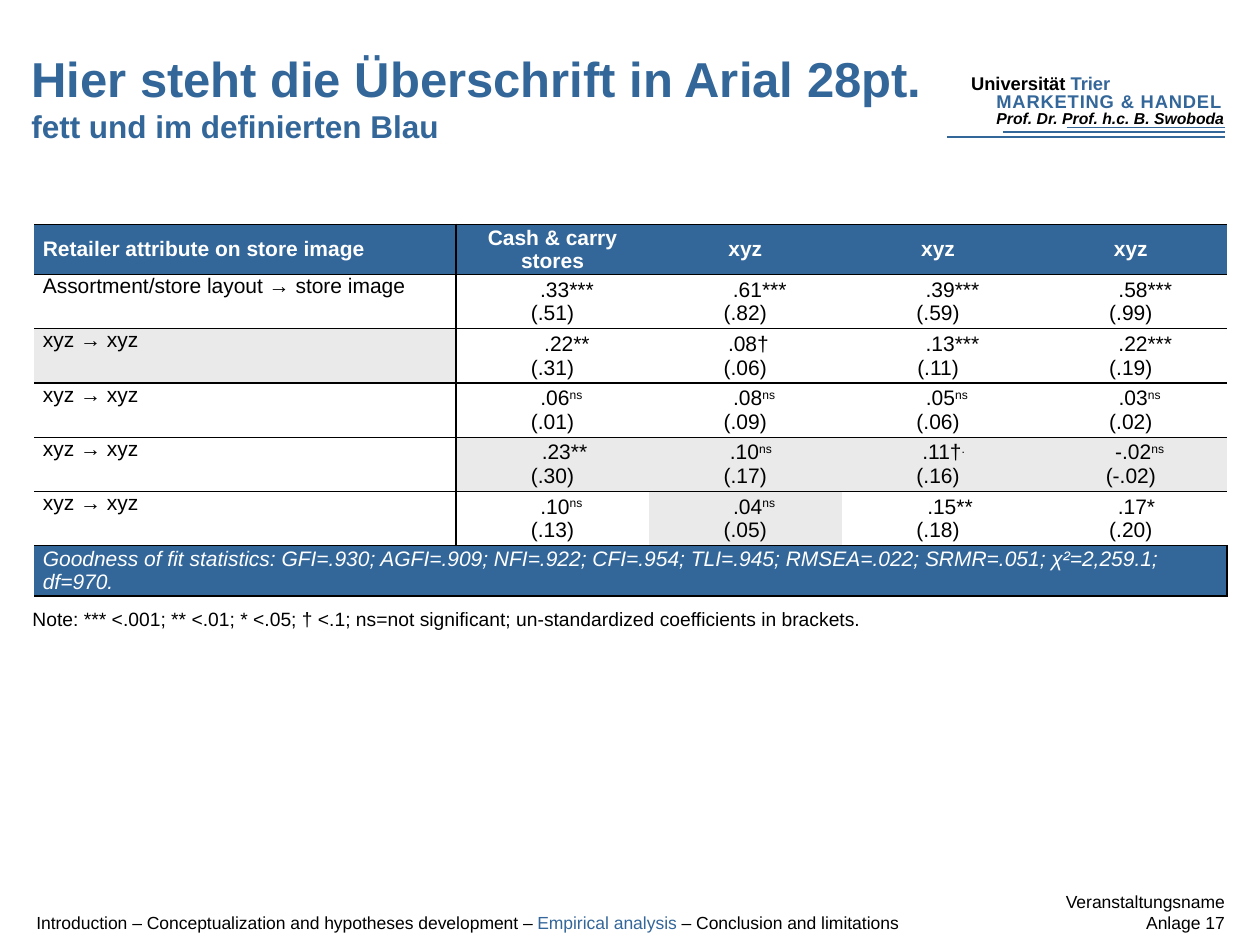
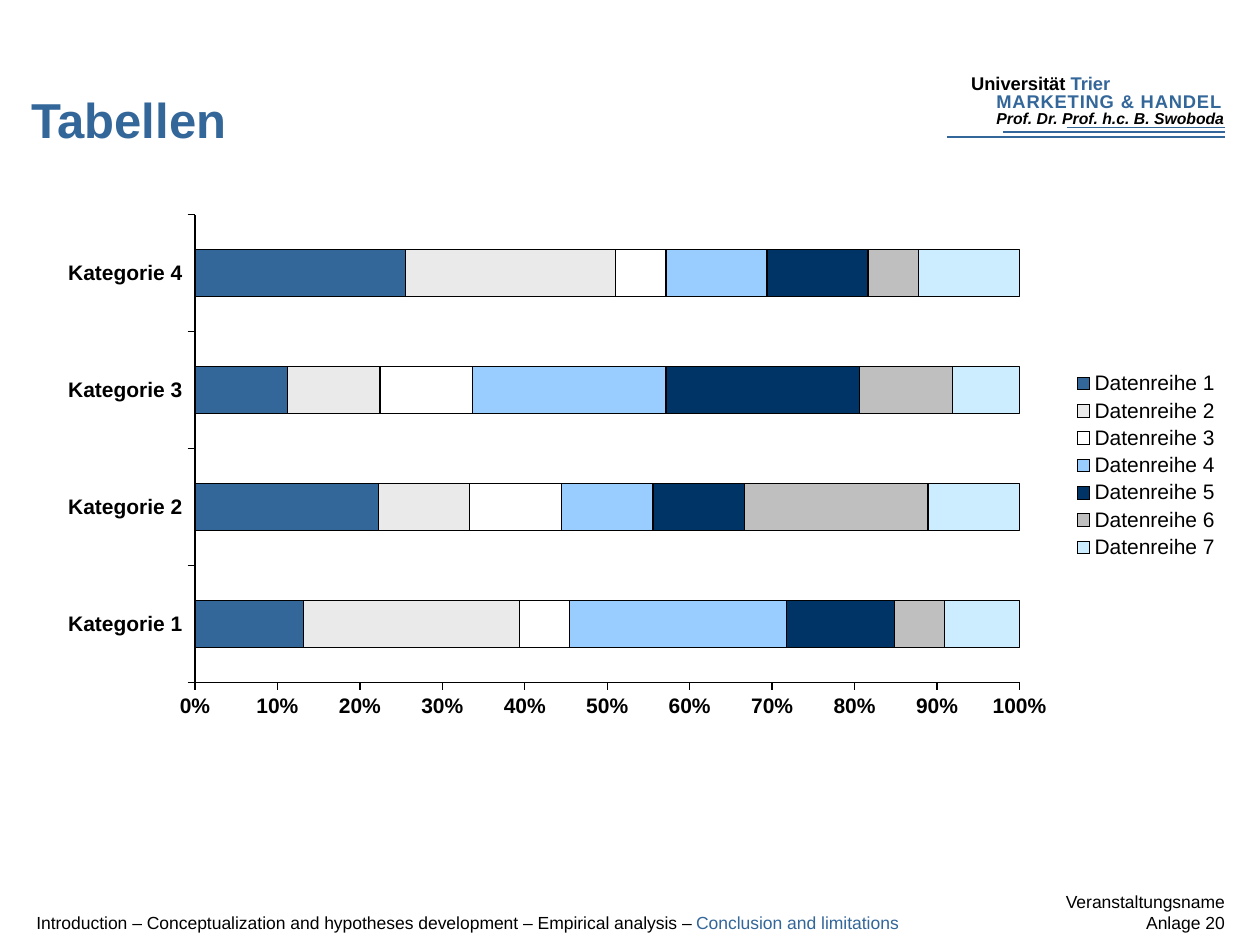
from dataclasses import dataclass
from typing import NamedTuple

from lxml.etree import SubElement
from pptx import Presentation
from pptx.chart.data import CategoryChartData
from pptx.dml.color import RGBColor
from pptx.enum.chart import XL_CHART_TYPE, XL_LEGEND_POSITION
from pptx.enum.shapes import MSO_CONNECTOR
from pptx.enum.text import MSO_ANCHOR, PP_ALIGN
from pptx.oxml import parse_xml
from pptx.oxml.ns import nsdecls, qn
from pptx.slide import Slide
from pptx.table import _Cell
from pptx.text.text import TextFrame, _Paragraph
from pptx.util import Emu, Pt

EMU_PER_PX = 9144  # 100 px to the inch
FONT = "Arial"
COLORS = {
    "blue": "336699", "black": "000000", "white": "FFFFFF", "light_gray": "EAEAEA",
    "sky": "99CCFF", "navy": "003366", "gray": "BFBFBF", "ice": "CCECFF",
}
SECTIONS = ["Introduction", "Conceptualization and hypotheses development",
            "Empirical analysis", "Conclusion and limitations"]


class Box(NamedTuple):
    left: int
    top: int
    width: int
    height: int


class Span(NamedTuple):
    text: str
    color: str = "black"
    size: float | None = None
    superscript: bool = False


class Rule(NamedTuple):
    left: int
    y: int
    weight: float


class Estimate(NamedTuple):
    value: str
    raised: str
    bracket: str
    indent: int


class Effect(NamedTuple):
    path_label: str
    estimates: list[Estimate]
    shaded: set[int]


class Series(NamedTuple):
    name: str
    values: list[int]
    color: str


@dataclass
class TextStyle:
    size: float
    bold: bool = False
    italic: bool = False
    align: PP_ALIGN = PP_ALIGN.LEFT
    tracking: int = 0


HEADLINE = TextStyle(28, bold=True)
FOOTER = TextStyle(10)
FOOTER_RIGHT = TextStyle(10, align=PP_ALIGN.RIGHT)
LETTERHEAD = [
    (Box(761, 52, 227, 29), [Span("Universität "), Span("Trier", "blue")],
     TextStyle(10.5, bold=True)),
    (Box(781, 67, 219, 29), [Span("MARKETING & HANDEL", "blue")],
     TextStyle(10.5, bold=True, tracking=50)),
    (Box(781, 81, 219, 25), [Span("Prof. Dr. Prof. h.c. B. Swoboda")],
     TextStyle(9, bold=True, italic=True)),
]
LETTERHEAD_RULES = [Rule(752, 109, 1), Rule(796, 105, 1), Rule(847, 101, 0.5)]
RIGHT_EDGE = 972

TABLE_BOX = Box(27, 178, 945, 296)
COLUMN_WIDTHS = [335, 153, 153, 153, 153]
BAND_HEIGHT, EFFECT_HEIGHT = 40, 43
HEADER = ["Retailer attribute on store image", "Cash & carry stores", "xyz", "xyz", "xyz"]
EFFECTS = [
    Effect("Assortment/store layout → store image", [
        Estimate(".33***", "", "(.51)", 23), Estimate(".61***", "", "(.82)", 23),
        Estimate(".39***", "", "(.59)", 23), Estimate(".58***", "", "(.99)", 23)], set()),
    Effect("xyz → xyz", [
        Estimate(".22**", "", "(.31)", 23), Estimate(".08†", "", "(.06)", 5),
        Estimate(".13***", "", "(.11)", 23), Estimate(".22***", "", "(.19)", 23)], {0}),
    Effect("xyz → xyz", [
        Estimate(".06", "ns", "(.01)", 14), Estimate(".08", "ns", "(.09)", 14),
        Estimate(".05", "ns", "(.06)", 14), Estimate(".03", "ns", "(.02)", 14)], set()),
    Effect("xyz → xyz", [
        Estimate(".23**", "", "(.30)", 19), Estimate(".10", "ns", "(.17)", 9),
        Estimate(".11†", ".", "(.16)", 9), Estimate("-.02", "ns", "(-.02)", 14)], {1, 2, 3, 4}),
    Effect("xyz → xyz", [
        Estimate(".10", "ns", "(.13)", 14), Estimate(".04", "ns", "(.05)", 14),
        Estimate(".15**", "", "(.18)", 19), Estimate(".17*", "", "(.20)", 9)], {2}),
]
FIT = ("Goodness of fit statistics: GFI=.930; AGFI=.909; NFI=.922; CFI=.954; TLI=.945; "
       "RMSEA=.022; SRMR=.051; χ²=2,259.1; df=970.")
NOTE = ("Note: *** <.001; ** <.01; * <.05; † <.1; ns=not significant; "
        "un-standardized coefficients in brackets.")

CATEGORIES = [f"Kategorie {number}" for number in range(1, 5)]
SERIES = [
    Series("Datenreihe 1", [13, 22, 11, 25], "blue"),
    Series("Datenreihe 2", [26, 11, 11, 25], "light_gray"),
    Series("Datenreihe 3", [6, 11, 11, 6], "white"),
    Series("Datenreihe 4", [26, 11, 23, 12], "sky"),
    Series("Datenreihe 5", [13, 11, 23, 12], "navy"),
    Series("Datenreihe 6", [6, 22, 11, 6], "gray"),
    Series("Datenreihe 7", [9, 11, 8, 12], "ice"),
]
PLOT_LAYOUT = {"x": 0.127, "y": 0.02, "w": 0.694, "h": 0.895}


def px(length: int) -> Emu:
    return Emu(length * EMU_PER_PX)


def emus(box: Box) -> list[Emu]:
    return [px(length) for length in box]


def rgb(color: str) -> RGBColor:
    return RGBColor.from_string(COLORS[color])


def write_paragraph(paragraph: _Paragraph, spans: list[Span], style: TextStyle) -> None:
    paragraph.alignment = style.align
    font = paragraph.font
    font.name, font.size = FONT, Pt(style.size)
    font.bold, font.italic = style.bold, style.italic
    for span in spans:
        run = paragraph.add_run()
        run.text = span.text
        run.font.color.rgb = rgb(span.color)
        if span.size:
            run.font.size = Pt(span.size)
        if span.superscript:
            run.font._element.set("baseline", "30000")
        if style.tracking:
            run.font._element.set("spc", str(style.tracking))


def write_lines(frame: TextFrame, lines: list[list[Span]], style: TextStyle) -> None:
    for index, spans in enumerate(lines):
        paragraph = frame.add_paragraph() if index else frame.paragraphs[0]
        write_paragraph(paragraph, spans, style)


def add_text(slide: Slide, box: Box, lines: list[list[Span]], style: TextStyle,
             anchor: MSO_ANCHOR = MSO_ANCHOR.TOP, inset: bool = True) -> None:
    frame = slide.shapes.add_textbox(*emus(box)).text_frame
    frame.word_wrap = True
    frame.vertical_anchor = anchor
    if not inset:
        frame.margin_left = frame.margin_right = frame.margin_top = frame.margin_bottom = 0
    write_lines(frame, lines, style)


def add_rule(slide: Slide, rule: Rule) -> None:
    line = slide.shapes.add_connector(
        MSO_CONNECTOR.STRAIGHT, px(rule.left), px(rule.y), px(RIGHT_EDGE), px(rule.y))
    line.line.color.rgb = rgb("blue")
    line.line.width = Pt(rule.weight)
    SubElement(line._element.spPr, qn("a:effectLst"))


def add_frame(slide: Slide, page: int, active: str) -> None:
    """Draw the letterhead and the footers that every slide carries."""
    for rule in LETTERHEAD_RULES:
        add_rule(slide, rule)
    for box, spans, style in LETTERHEAD:
        add_text(slide, box, [spans], style)
    add_text(slide, Box(752, 707, 220, 34), [[Span("Veranstaltungsname")],
             [Span(f"Anlage {page}")]], FOOTER_RIGHT, inset=False)
    before, after = " – ".join(SECTIONS).split(active)
    trail = [Span(before), Span(active, "blue"), Span(after)]
    add_text(slide, Box(19, 712, 824, 40), [[span for span in trail if span.text]],
             FOOTER, MSO_ANCHOR.MIDDLE)


def add_headline(slide: Slide, box: Box, spans: list[Span]) -> None:
    add_text(slide, box, [spans], HEADLINE, MSO_ANCHOR.BOTTOM)


def set_borders(cell: _Cell, column: int) -> None:
    """Rule every row and separate the label column from the estimates."""
    points = {"lnL": int(column == 1), "lnR": int(column == 0), "lnT": 0.75, "lnB": 0.75}
    properties = cell._tc.get_or_add_tcPr()
    for side, width in points.items():
        border = SubElement(properties, qn(f"a:{side}"), w=str(Pt(width)))
        if width:
            fill = SubElement(border, qn("a:solidFill"))
            SubElement(fill, qn("a:srgbClr"), val=COLORS["black"])
        else:
            SubElement(border, qn("a:noFill"))


def fill_cell(cell: _Cell, lines: list[list[Span]], style: TextStyle, fill: str | None,
              anchor: MSO_ANCHOR = MSO_ANCHOR.MIDDLE) -> None:
    cell.vertical_anchor = anchor
    cell.margin_left = cell.margin_right = px(7)
    cell.margin_top = cell.margin_bottom = 0
    if fill:
        cell.fill.solid()
        cell.fill.fore_color.rgb = rgb(fill)
    else:
        cell.fill.background()
    write_lines(cell.text_frame, lines, style)


def add_effects_table(slide: Slide) -> None:
    row_heights = [BAND_HEIGHT, *[EFFECT_HEIGHT] * len(EFFECTS), BAND_HEIGHT]
    table = slide.shapes.add_table(
        len(row_heights), len(COLUMN_WIDTHS), *emus(TABLE_BOX)).table
    table.first_row = table.horz_banding = False
    for column, width in zip(table.columns, COLUMN_WIDTHS):
        column.width = px(width)
    for row, height in zip(table.rows, row_heights):
        row.height = px(height)
        for index, cell in enumerate(row.cells):
            set_borders(cell, index)

    label, centred = TextStyle(12), TextStyle(12, align=PP_ALIGN.CENTER)
    for index, heading in enumerate(HEADER):
        style = TextStyle(12, bold=True, align=PP_ALIGN.CENTER if index else PP_ALIGN.LEFT)
        fill_cell(table.cell(0, index), [[Span(heading, "white")]], style, "blue")
    for row, effect in enumerate(EFFECTS, start=1):
        fills = ["light_gray" if index in effect.shaded else None
                 for index in range(len(HEADER))]
        fill_cell(table.cell(row, 0), [[Span(effect.path_label)]], label, fills[0],
                  MSO_ANCHOR.TOP)
        for index, estimate in enumerate(effect.estimates, start=1):
            value = [Span(estimate.value)]
            if estimate.raised:
                value.append(Span(estimate.raised, superscript=True))
            cell = table.cell(row, index)
            fill_cell(cell, [value, [Span(estimate.bracket)]], centred, fills[index])
            indent = cell.text_frame.paragraphs[0]._p.get_or_add_pPr()
            indent.set("marL", str(px(estimate.indent)))
    last = len(row_heights) - 1
    table.cell(last, 0).merge(table.cell(last, len(HEADER) - 1))
    fill_cell(table.cell(last, 0), [[Span(FIT, "white")]], TextStyle(12, italic=True), "blue")


def add_share_chart(slide: Slide) -> None:
    data = CategoryChartData()
    data.categories = CATEGORIES
    for series in SERIES:
        data.add_series(series.name, series.values)
    chart = slide.shapes.add_chart(
        XL_CHART_TYPE.BAR_STACKED_100, *emus(Box(35, 162, 943, 415)), data).chart
    chart.has_title = False
    chart.font.name, chart.font.size = FONT, Pt(12)
    chart.font.color.rgb = rgb("black")
    chart.has_legend = True
    chart.legend.position = XL_LEGEND_POSITION.RIGHT
    chart.legend.include_in_layout = False

    plot = chart.plots[0]
    plot.gap_width, plot.overlap = 150, 100
    plot.vary_by_categories = False
    outlines = [chart.category_axis.format.line, chart.value_axis.format.line]
    for drawn, series in zip(plot.series, SERIES):
        drawn.format.fill.solid()
        drawn.format.fill.fore_color.rgb = rgb(series.color)
        outlines.append(drawn.format.line)
    for outline in outlines:
        outline.color.rgb = rgb("black")
        outline.width = Pt(0.75)

    for axis in (chart.category_axis, chart.value_axis):
        axis.has_major_gridlines = False
        axis.tick_labels.font.bold = True
    chart.value_axis.major_unit = 0.1
    chart.value_axis.tick_labels.number_format = "0%"
    chart.value_axis.tick_labels.number_format_is_linked = False

    plot_area = chart._chartSpace.chart.plotArea
    for layout in plot_area.findall(qn("c:layout")):
        plot_area.remove(layout)
    sizes = "".join(f'<c:{key} val="{share}"/>' for key, share in PLOT_LAYOUT.items())
    plot_area.insert(0, parse_xml(
        f'<c:layout {nsdecls("c")}><c:manualLayout><c:layoutTarget val="inner"/>'
        f'<c:xMode val="edge"/><c:yMode val="edge"/>{sizes}</c:manualLayout></c:layout>'))


def main() -> None:
    deck = Presentation()
    deck.slide_width, deck.slide_height = px(1000), px(750)
    blank = deck.slide_layouts[6]

    effects = deck.slides.add_slide(blank)
    add_frame(effects, 17, "Empirical analysis")
    add_headline(effects, Box(15, 17, 729, 103), [
        Span("Hier steht die Überschrift in Arial 28pt. ", "blue"),
        Span("fett und im definierten Blau", "blue", 18)])
    add_effects_table(effects)
    add_text(effects, Box(16, 477, 760, 29), [[Span(NOTE)]], TextStyle(11))

    shares = deck.slides.add_slide(blank)
    add_frame(shares, 20, "Conclusion and limitations")
    add_headline(shares, Box(15, 30, 721, 93), [Span("Tabellen", "blue")])
    add_share_chart(shares)

    deck.save("out.pptx")


if __name__ == "__main__":
    main()
